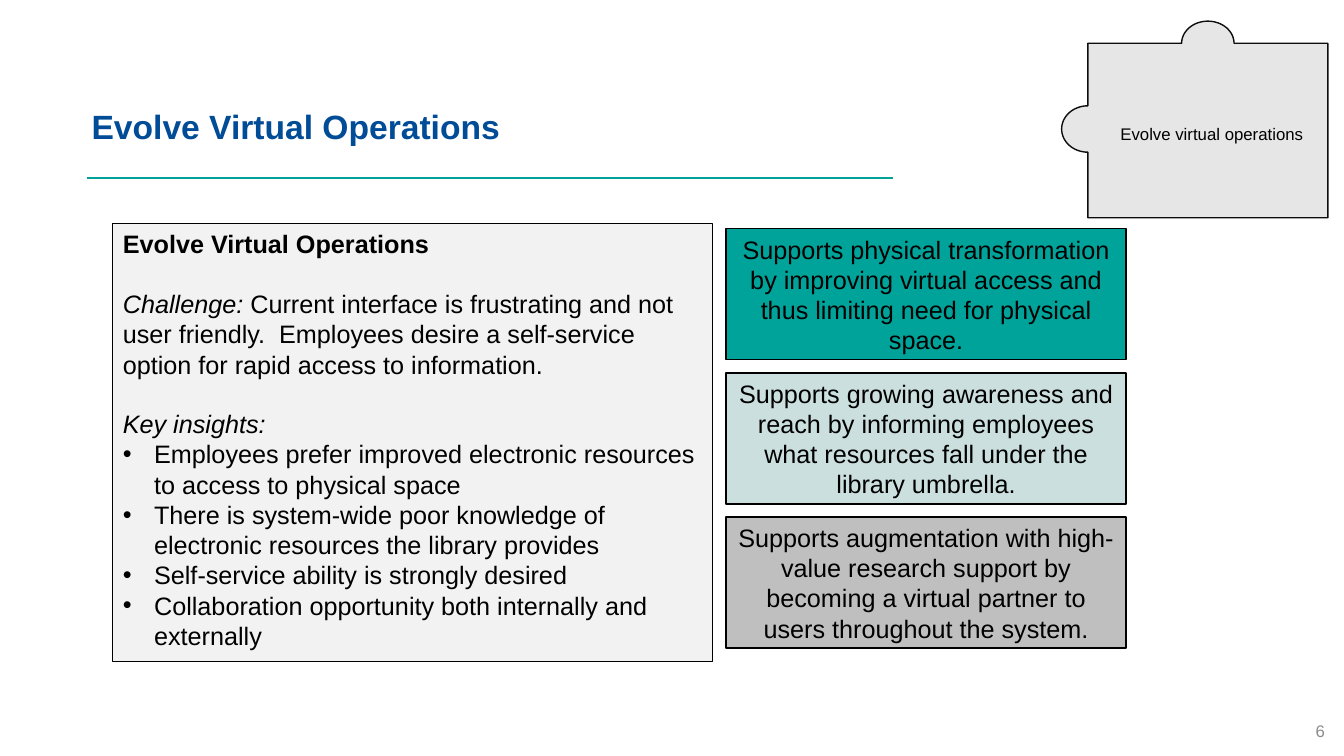
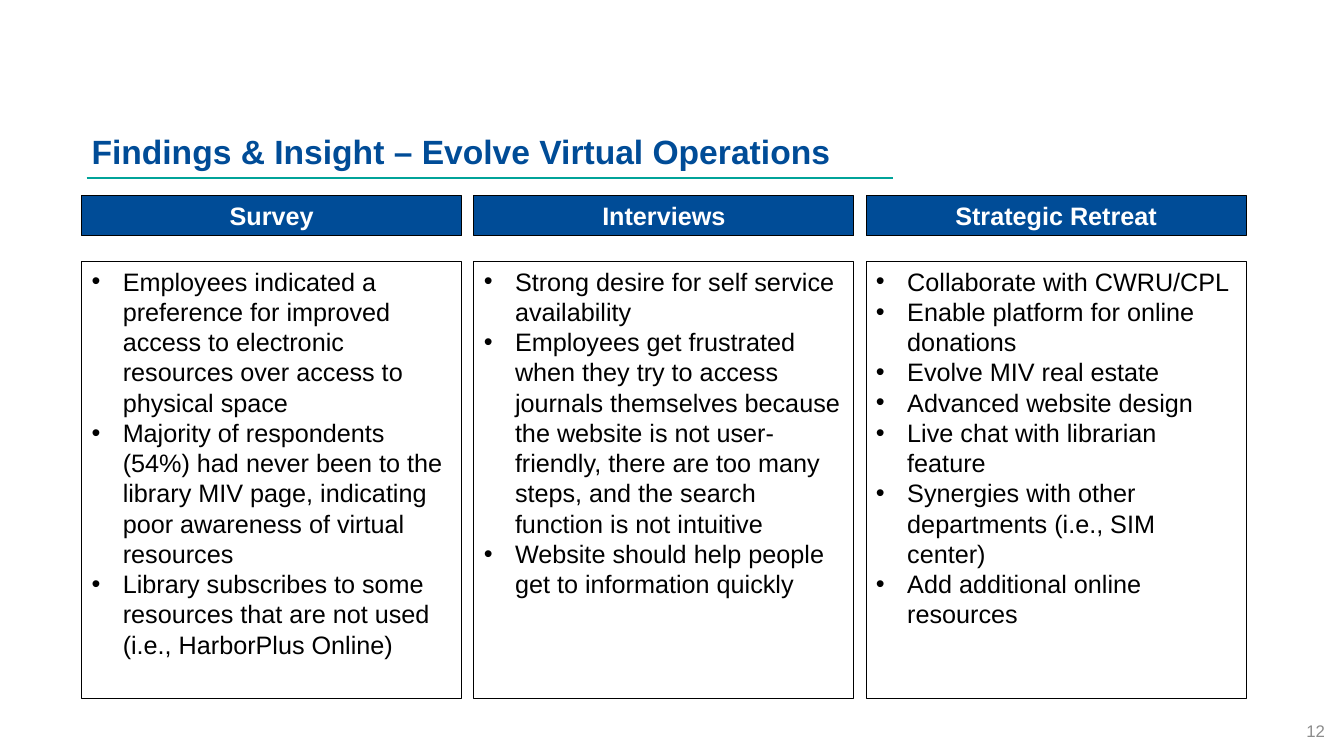
import math
from dataclasses import dataclass

import pptx
import pptx.dml.color
import pptx.enum.shapes
import pptx.enum.text
import pptx.util
from lxml import etree
from pptx.oxml.ns import qn
from pptx.util import Inches, Pt

ALIGN = pptx.enum.text.PP_ALIGN
ANCHOR = pptx.enum.text.MSO_ANCHOR


@dataclass(frozen=True)
class Theme:
    font: str = "Arial"
    blue: str = "004C97"
    teal: str = "00A399"
    mist: str = "CBE0DE"
    silver: str = "BFBFBF"
    panel: str = "F2F2F2"
    puzzle: str = "E7E6E6"
    puzzle_edge: str = "0D0D0D"
    black: str = "000000"
    white: str = "FFFFFF"
    muted: str = "8C8C8C"
    title_size: int = 24
    body_size: int = 18
    small_size: int = 12
    indent: float = 0.31
    blank_line: int = 21


THEME = Theme()

OVERVIEW = {
    "title": "Evolve Virtual Operations",
    "page": "6",
    "heading": "Evolve Virtual Operations",
    "challenge_label": "Challenge: ",
    "challenge": "Current interface is frustrating and not user friendly.  "
                 "Employees desire a self-service option for rapid access to information.",
    "insights_label": "Key insights:",
    "insights": [
        "Employees prefer improved electronic resources to access to physical space",
        "There is system-wide poor knowledge of electronic resources the library provides",
        "Self-service ability is strongly desired",
        "Collaboration opportunity both internally and externally",
    ],
    "supports": [
        ("Supports physical transformation by improving virtual access and thus "
         "limiting need for physical space.", THEME.teal),
        ("Supports growing awareness and reach by informing employees what "
         "resources fall under the library umbrella.", THEME.mist),
        ("Supports augmentation with high-value research support by becoming a "
         "virtual partner to users throughout the system.", THEME.silver),
    ],
    "puzzle": "Evolve virtual operations",
}

FINDINGS = {
    "title": "Findings & Insight – Evolve Virtual Operations",
    "page": "12",
    "columns": [
        ("Survey", [
            "Employees indicated a preference for improved access to electronic "
            "resources over access to physical space",
            "Majority of respondents (54%) had never been to the library MIV page, "
            "indicating poor awareness of virtual resources",
            "Library subscribes to some resources that are not used "
            "(i.e., HarborPlus Online)",
        ]),
        ("Interviews", [
            "Strong desire for self service availability",
            "Employees get frustrated when they try to access journals themselves "
            "because the website is not user-friendly, there are too many steps, "
            "and the search function is not intuitive",
            "Website should help people get to information quickly",
        ]),
        ("Strategic Retreat", [
            "Collaborate with CWRU/CPL",
            "Enable platform for online donations",
            "Evolve MIV real estate",
            "Advanced website design",
            "Live chat with librarian feature",
            "Synergies with other departments (i.e., SIM center)",
            "Add additional online resources",
        ]),
    ],
}


def rgb(value):
    return pptx.dml.color.RGBColor.from_string(value)


def add_bullet(paragraph):
    properties = paragraph._p.get_or_add_pPr()
    properties.set("marL", str(Inches(THEME.indent)))
    properties.set("indent", str(-Inches(THEME.indent)))
    etree.SubElement(properties, qn("a:buFont")).set("typeface", THEME.font)
    etree.SubElement(properties, qn("a:buChar")).set("char", "•")


def write(shape, runs, size=THEME.body_size, color=THEME.black, bold=False,
          italic=False, align=ALIGN.LEFT, anchor=ANCHOR.TOP, bullet=False,
          space_before=0, line_spacing=None):
    """Append one paragraph; runs is a string or a list of (text, italic) pairs."""
    frame = shape.text_frame
    frame.word_wrap = True
    frame.vertical_anchor = anchor
    first = frame.paragraphs[0]
    paragraph = frame.add_paragraph() if first.runs else first
    if bullet:
        add_bullet(paragraph)
    paragraph.alignment = align
    if space_before:
        paragraph.space_before = Pt(space_before)
    if line_spacing:
        paragraph.line_spacing = line_spacing
    for text, slanted in [(runs, italic)] if isinstance(runs, str) else runs:
        run = paragraph.add_run()
        run.text = text
        run.font.name = THEME.font
        run.font.size = Pt(size)
        run.font.bold = bold
        run.font.italic = slanted
        run.font.color.rgb = rgb(color)


def paint(shape, fill=None, edge=THEME.black, edge_width=0.75):
    shape.shadow.inherit = False
    if fill:
        shape.fill.solid()
        shape.fill.fore_color.rgb = rgb(fill)
    else:
        shape.fill.background()
    shape.line.color.rgb = rgb(edge)
    shape.line.width = Pt(edge_width)


def add_box(slide, left, top, width, height, **style):
    box = slide.shapes.add_shape(
        pptx.enum.shapes.MSO_SHAPE.RECTANGLE,
        Inches(left), Inches(top), Inches(width), Inches(height))
    paint(box, **style)
    return box


def add_label(slide, left, top, width, height, text, **style):
    label = slide.shapes.add_textbox(
        Inches(left), Inches(top), Inches(width), Inches(height))
    write(label, text, **style)


def add_base_slide(deck, content, title_top):
    """Add a slide with the shared title, rule and page number."""
    slide = deck.slides.add_slide(deck.slide_layouts[6])
    rule = slide.shapes.add_connector(
        pptx.enum.shapes.MSO_CONNECTOR.STRAIGHT,
        Inches(0.86), Inches(1.77), Inches(8.86), Inches(1.77))
    rule.line.color.rgb = rgb(THEME.teal)
    rule.line.width = Pt(1.5)
    etree.SubElement(rule._element.spPr, qn("a:effectLst"))
    add_label(slide, 0.81, title_top, 10.69, 0.63, content["title"],
              size=THEME.title_size, color=THEME.blue, bold=True, line_spacing=0.9)
    add_label(slide, 10.13, 7.1, 3.11, 0.4, content["page"],
              size=THEME.small_size, color=THEME.muted, align=ALIGN.RIGHT)
    return slide


def half_ellipse(center_x, center_y, radius_x, radius_y, start, steps=32):
    """Points of a clockwise half turn, starting at an angle in degrees."""
    angles = [math.radians(start + 180 * step / steps) for step in range(steps + 1)]
    return [(center_x + radius_x * math.cos(a), center_y + radius_y * math.sin(a))
            for a in angles]


def add_puzzle_piece(slide, text):
    left, top, right, bottom = 10.79, 0.43, 13.17, 2.16
    outline = [
        (right, bottom), (left, bottom),
        *half_ellipse(left, 1.28, 0.26, 0.23, start=90),
        (left, top),
        *half_ellipse(11.98, top, 0.26, 0.22, start=180),
        (right, top),
    ]
    points = [(Inches(x), Inches(y)) for x, y in outline]
    builder = slide.shapes.build_freeform(*points[0])
    builder.add_line_segments(points[1:], close=True)
    paint(builder.convert_to_shape(), fill=THEME.puzzle, edge=THEME.puzzle_edge,
          edge_width=1)
    add_label(slide, 10.87, 1.18, 2.3, 0.3, text,
              size=THEME.small_size, align=ALIGN.CENTER)


def build_overview(deck):
    slide = add_base_slide(deck, OVERVIEW, title_top=1.05)
    summary = add_box(slide, 1.12, 2.22, 5.95, 4.34, fill=THEME.panel)
    write(summary, OVERVIEW["heading"], bold=True)
    write(summary, [(OVERVIEW["challenge_label"], True), (OVERVIEW["challenge"], False)],
          space_before=THEME.blank_line)
    write(summary, OVERVIEW["insights_label"], italic=True,
          space_before=THEME.blank_line)
    for insight in OVERVIEW["insights"]:
        write(summary, insight, bullet=True)

    height, gap = 1.3, 0.13
    for row, (text, fill) in enumerate(OVERVIEW["supports"]):
        support = add_box(slide, 7.2, 2.27 + row * (height + gap), 3.97, height,
                          fill=fill, edge_width=1)
        write(support, text, align=ALIGN.CENTER, anchor=ANCHOR.MIDDLE)
    add_puzzle_piece(slide, OVERVIEW["puzzle"])


def build_findings(deck):
    slide = add_base_slide(deck, FINDINGS, title_top=1.29)
    width, gap = 3.77, 0.12
    for index, (heading, findings) in enumerate(FINDINGS["columns"]):
        left = 0.81 + index * (width + gap)
        header = add_box(slide, left, 1.94, width, 0.4, fill=THEME.blue)
        write(header, heading, color=THEME.white, bold=True, align=ALIGN.CENTER)
        body = add_box(slide, left, 2.59, width, 4.34)
        for finding in findings:
            write(body, finding, bullet=True)


def main():
    deck = pptx.Presentation()
    deck.slide_width = Inches(13.33)
    deck.slide_height = Inches(7.5)
    build_overview(deck)
    build_findings(deck)
    deck.save("out.pptx")


if __name__ == "__main__":
    main()
